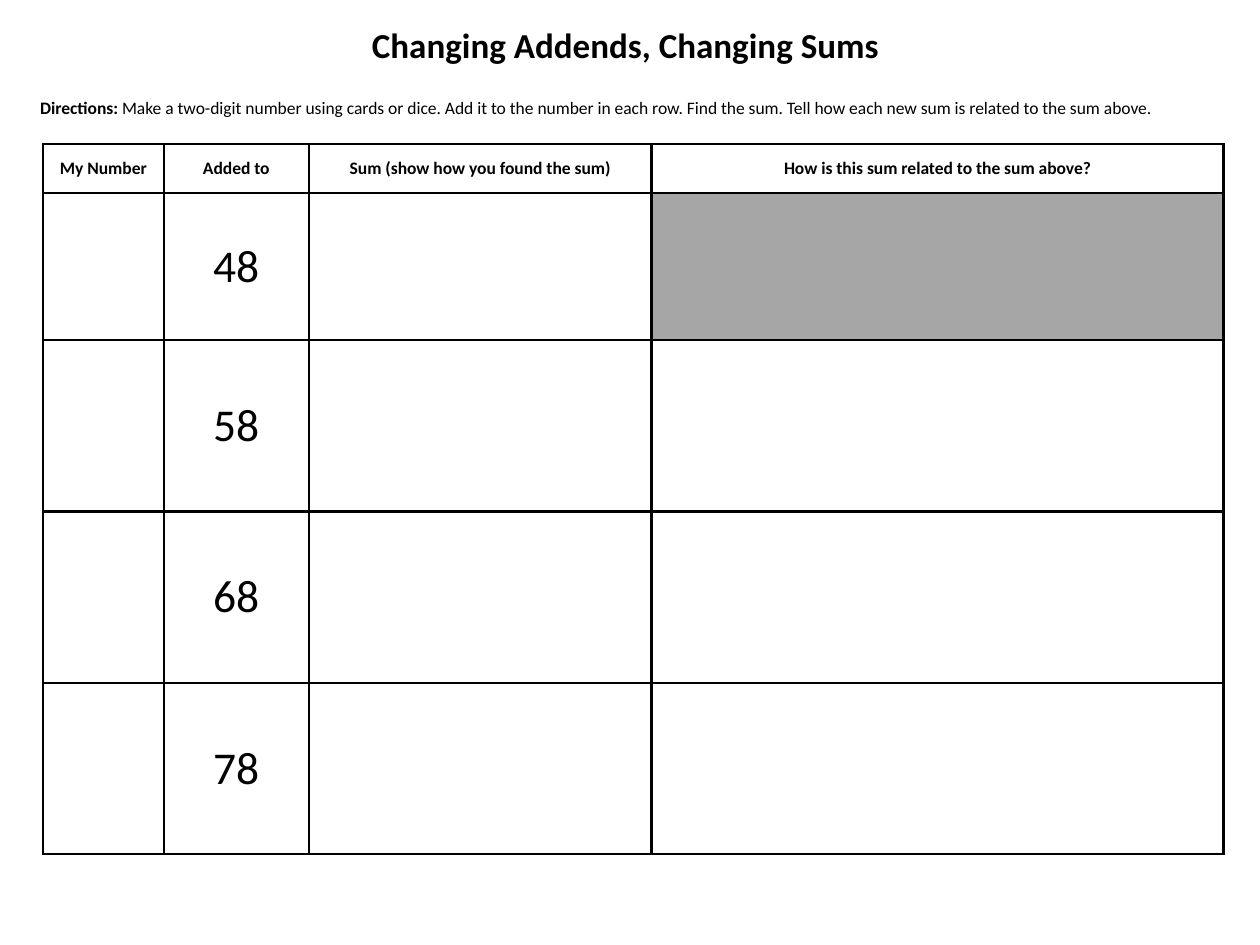
from lxml.etree import SubElement
from pptx import Presentation
from pptx.dml.color import RGBColor
from pptx.enum.shapes import MSO_SHAPE
from pptx.enum.text import MSO_ANCHOR, MSO_AUTO_SIZE, PP_ALIGN
from pptx.oxml.ns import qn
from pptx.util import Inches, Pt

COLORS = {"ink": "000000", "paper": "FFFFFF", "blocked": "A6A6A6"}
HEADINGS = ["My Number", "Added to", "Sum (show how you found the sum)",
            "How is this sum related to the sum above?"]
ADDENDS = [48, 58, 68, 78]
COLUMN_WIDTHS = [0.96, 1.15, 2.72, 4.54]
ROW_HEIGHTS = [0.39, 1.17] + [1.36] * 3


class Worksheet:
    font_name = "Calibri"
    body_size = 10
    border_width = 1.5

    def __init__(self, slide):
        self.slide = slide

    def color(self, name):
        return RGBColor.from_string(COLORS[name])

    def style(self, font, size, bold=False):
        font.name = self.font_name
        font.size = Pt(size)
        font.bold = bold
        font.color.rgb = self.color("ink")

    def title(self, text, left, top, width, height):
        heading = self.slide.shapes.title
        heading.left, heading.top = Inches(left), Inches(top)
        heading.width, heading.height = Inches(width), Inches(height)
        frame = heading.text_frame
        frame.text = text
        frame.auto_size = MSO_AUTO_SIZE.NONE
        frame.vertical_anchor = MSO_ANCHOR.MIDDLE
        frame.paragraphs[0].alignment = PP_ALIGN.CENTER
        self.style(frame.paragraphs[0].runs[0].font, 20, bold=True)

    def directions(self, label, text, left, top, width, height):
        panel = self.slide.shapes.add_shape(
            MSO_SHAPE.RECTANGLE, Inches(left), Inches(top), Inches(width), Inches(height))
        panel.shadow.inherit = False
        panel.fill.solid()
        panel.fill.fore_color.rgb = self.color("paper")
        panel.line.color.rgb = self.color("paper")
        panel.line.width = Pt(1)
        frame = panel.text_frame
        frame.word_wrap = True
        frame.vertical_anchor = MSO_ANCHOR.MIDDLE
        paragraph = frame.paragraphs[0]
        paragraph.alignment = PP_ALIGN.LEFT
        for words, bold in ((label, True), (text, False)):
            run = paragraph.add_run()
            run.text = words
            self.style(run.font, self.body_size, bold)

    def borders(self, cell):
        properties = cell._tc.get_or_add_tcPr()
        for side in ("a:lnL", "a:lnR", "a:lnT", "a:lnB"):
            line = SubElement(properties, qn(side), w=str(Pt(self.border_width)))
            fill = SubElement(line, qn("a:solidFill"))
            SubElement(fill, qn("a:srgbClr"), val=COLORS["ink"])

    def cell(self, cell, text, size, bold, fill):
        self.borders(cell)
        cell.fill.solid()
        cell.fill.fore_color.rgb = self.color(fill)
        cell.vertical_anchor = MSO_ANCHOR.MIDDLE
        cell.margin_left = cell.margin_right = Inches(0.06)
        cell.margin_top = cell.margin_bottom = 0
        cell.text_frame.text = text
        paragraph = cell.text_frame.paragraphs[0]
        paragraph.alignment = PP_ALIGN.CENTER
        for run in paragraph.runs:
            self.style(run.font, size, bold)

    def table(self, rows, blocked, left, top):
        grid = self.slide.shapes.add_table(
            len(rows), len(COLUMN_WIDTHS), Inches(left), Inches(top),
            Inches(sum(COLUMN_WIDTHS)), Inches(sum(ROW_HEIGHTS))).table
        for column, width in zip(grid.columns, COLUMN_WIDTHS):
            column.width = Inches(width)
        for row, height in zip(grid.rows, ROW_HEIGHTS):
            row.height = Inches(height)
        for r, row in enumerate(rows):
            header = r == 0
            for c, text in enumerate(row):
                self.cell(grid.cell(r, c), text, self.body_size if header else 26,
                          header, "blocked" if (r, c) == blocked else "paper")


def main():
    presentation = Presentation()
    presentation.slide_width, presentation.slide_height = Inches(10), Inches(7.5)
    worksheet = Worksheet(presentation.slides.add_slide(presentation.slide_layouts[5]))
    worksheet.title("Changing Addends, Changing Sums", 0.22, 0.12, 9.49, 0.46)
    worksheet.directions(
        "Directions:",
        " Make a two-digit number using cards or dice. Add it to the number in each row. "
        "Find the sum. Tell how each new sum is related to the sum above.",
        0.22, 0.58, 9.49, 0.55)
    rows = [HEADINGS] + [["", str(addend), "", ""] for addend in ADDENDS]
    worksheet.table(rows, (1, 3), 0.34, 1.14)
    presentation.save("out.pptx")


if __name__ == "__main__":
    main()
